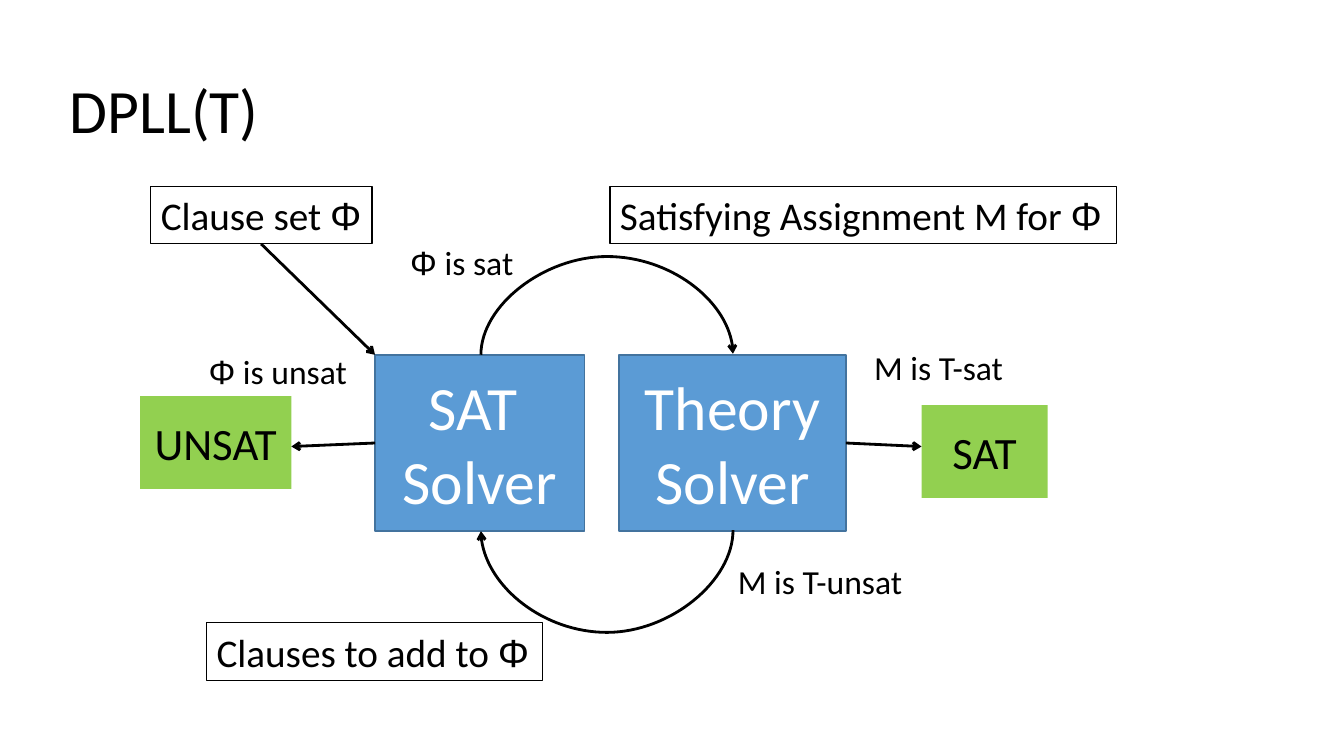
from dataclasses import dataclass

from lxml import etree
from pptx import Presentation
from pptx.dml.color import RGBColor
from pptx.enum.shapes import MSO_CONNECTOR, MSO_SHAPE
from pptx.enum.text import MSO_ANCHOR, MSO_AUTO_SIZE, PP_ALIGN
from pptx.oxml.ns import qn
from pptx.util import Pt

PX = 9144  # EMU per px, 100 px to the inch
RECTANGLE = MSO_SHAPE.RECTANGLE
STRAIGHT, CURVE = MSO_CONNECTOR.STRAIGHT, MSO_CONNECTOR.CURVE
LEFT, CENTER = PP_ALIGN.LEFT, PP_ALIGN.CENTER
TOP, MIDDLE = MSO_ANCHOR.TOP, MSO_ANCHOR.MIDDLE
SIDE_TOP, SIDE_LEFT, SIDE_BOTTOM, SIDE_RIGHT = range(4)
TITLE_ONLY = 5
PHI = "Φ"


@dataclass(frozen=True)
class Theme:
    ink: RGBColor = RGBColor(0, 0, 0)
    white: RGBColor = RGBColor(255, 255, 255)
    solver: RGBColor = RGBColor(0x5B, 0x9B, 0xD5)
    solver_edge: RGBColor = RGBColor(0x43, 0x73, 0x9E)
    result: RGBColor = RGBColor(0x92, 0xD0, 0x50)
    font: str = "Calibri"
    symbol_font: str = "Arial"
    large: int = 44
    result_size: int = 32
    data_size: int = 28
    label_size: int = 24


THEME = Theme()


def px(*lengths):
    return [round(length * PX) for length in lengths]


def format_text(text_frame, size, color, alignment, anchor):
    text_frame.vertical_anchor = anchor
    for paragraph in text_frame.paragraphs:
        paragraph.alignment = alignment
        for run in paragraph.runs:
            run.font.size = Pt(size)
            run.font.color.rgb = color
            run.font.name = THEME.symbol_font if run.text == PHI else THEME.font


def set_symbol_text(text_frame, text):
    """Give each Φ a run of its own, so that it can take the symbol font."""
    before, symbol, after = text.partition(PHI)
    paragraph = text_frame.paragraphs[0]
    for part in filter(None, (before, symbol, after)):
        paragraph.add_run().text = part


# Title
def add_title(slide, box, text):
    title = slide.shapes.title
    title.left, title.top, title.width, title.height = px(*box)
    title.text_frame.text = text
    title.text_frame.paragraphs[0].line_spacing = 0.9
    format_text(title.text_frame, THEME.large, THEME.ink, LEFT, MIDDLE)


# Solver and result blocks
def add_block(slide, box, text, size, color, fill, edge=None):
    block = slide.shapes.add_shape(RECTANGLE, *px(*box))
    block.shadow.inherit = False
    block.fill.solid()
    block.fill.fore_color.rgb = fill
    if edge is None:
        block.line.fill.background()
    else:
        block.line.color.rgb = edge
        block.line.width = Pt(1)
    block.text_frame.text = text
    block.text_frame.word_wrap = True
    format_text(block.text_frame, size, color, CENTER, MIDDLE)
    return block


# Free labels and framed data boxes
def add_label(slide, box, text, size=THEME.label_size, framed=False, alignment=LEFT):
    label = slide.shapes.add_textbox(*px(*box))
    label.text_frame.word_wrap = False
    label.text_frame.auto_size = MSO_AUTO_SIZE.SHAPE_TO_FIT_TEXT
    set_symbol_text(label.text_frame, text)
    format_text(label.text_frame, size, THEME.ink, alignment, TOP)
    if framed:
        label.line.color.rgb = THEME.ink
        label.line.width = Pt(0.75)
    return label


# Arrows
def style_arrow(connector):
    connector.line.color.rgb = THEME.ink
    connector.line.width = Pt(2)
    line = connector.line._get_or_add_ln()
    etree.SubElement(line, qn("a:tailEnd"), type="arrow")
    etree.SubElement(connector._element.spPr, qn("a:effectLst"))


def add_arrow(slide, source, side, end):
    arrow = slide.shapes.add_connector(STRAIGHT, 0, 0, *px(*end))
    arrow.begin_connect(source, side)
    style_arrow(arrow)


def add_arc(slide, source, target, side, box, bulge):
    """Join two blocks by a curve on a one px deep box, turned by 90 degrees."""
    arc = slide.shapes.add_connector(CURVE, 0, 0, 0, 0)
    arc.begin_connect(source, side)
    arc.end_connect(target, side)
    left, top, span, depth = box
    arc.left, arc.top, arc.width, arc.height = px(
        left + (span - depth) / 2, top + (depth - span) / 2, depth, span)
    properties = arc._element.spPr
    transform = properties.find(qn("a:xfrm"))
    transform.set("rot", "5400000")
    for flip in ("flipH", "flipV"):
        transform.set(flip, "1" if side == SIDE_TOP else "0")
    guides = properties.find(qn("a:prstGeom")).get_or_add_avLst()
    etree.SubElement(guides, qn("a:gd"), name="adj1",
                     fmla=f"val {bulge * 100000 // depth}")
    style_arrow(arc)


# Solver loop: all places count from the top left of its box
def add_solver_loop(slide, left, top):
    def at(x, y, width, height):
        return left + x, top + y, width, height

    def add_result(box, text):
        add_block(slide, box, text, THEME.result_size, THEME.ink, THEME.result)

    def add_solver(box, text):
        return add_block(slide, box, text, THEME.large, THEME.white,
                         THEME.solver, THEME.solver_edge)

    def add_data(box, text, alignment=LEFT):
        return add_label(slide, box, text, THEME.data_size, True, alignment)

    add_result(at(0, 208, 150, 92), "UNSAT")
    add_result(at(775, 217, 125, 92), "SAT")
    sat_solver = add_solver(at(233, 167, 208, 175), "SAT \nSolver")
    theory_solver = add_solver(at(475, 167, 225, 175), "Theory Solver")

    add_arc(slide, sat_solver, theory_solver, SIDE_TOP, at(338, 166, 250, 1), 99)
    add_data(at(466, 0, 502, 57), "Satisfying Assignment M for Φ")
    add_arc(slide, theory_solver, sat_solver, SIDE_BOTTOM, at(338, 341, 250, 1), 103)
    add_data(at(66, 433, 333, 57), "Clauses to add to Φ")

    add_arrow(slide, sat_solver, SIDE_LEFT, (left + 150, top + 258))
    add_arrow(slide, theory_solver, SIDE_RIGHT, (left + 775, top + 258))

    for box, text in (
        (at(258, 50, 122, 50), "Φ is sat"),
        (at(58, 158, 157, 50), "Φ is unsat"),
        (at(718, 154, 152, 50), "M is T-sat"),
        (at(583, 367, 187, 50), "M is T-unsat"),
    ):
        add_label(slide, box, text)

    clause_set = add_data(at(10, 0, 220, 57), "Clause set Φ", CENTER)
    add_arrow(slide, clause_set, SIDE_BOTTOM, (left + 233, top + 167))


def main():
    presentation = Presentation()
    presentation.slide_width, presentation.slide_height = px(1333, 750)
    slide = presentation.slides.add_slide(presentation.slide_layouts[TITLE_ONLY])
    add_title(slide, (59, 40, 1217, 145), "DPLL(T)")
    add_solver_loop(slide, 139, 185)
    presentation.save("out.pptx")


if __name__ == "__main__":
    main()
